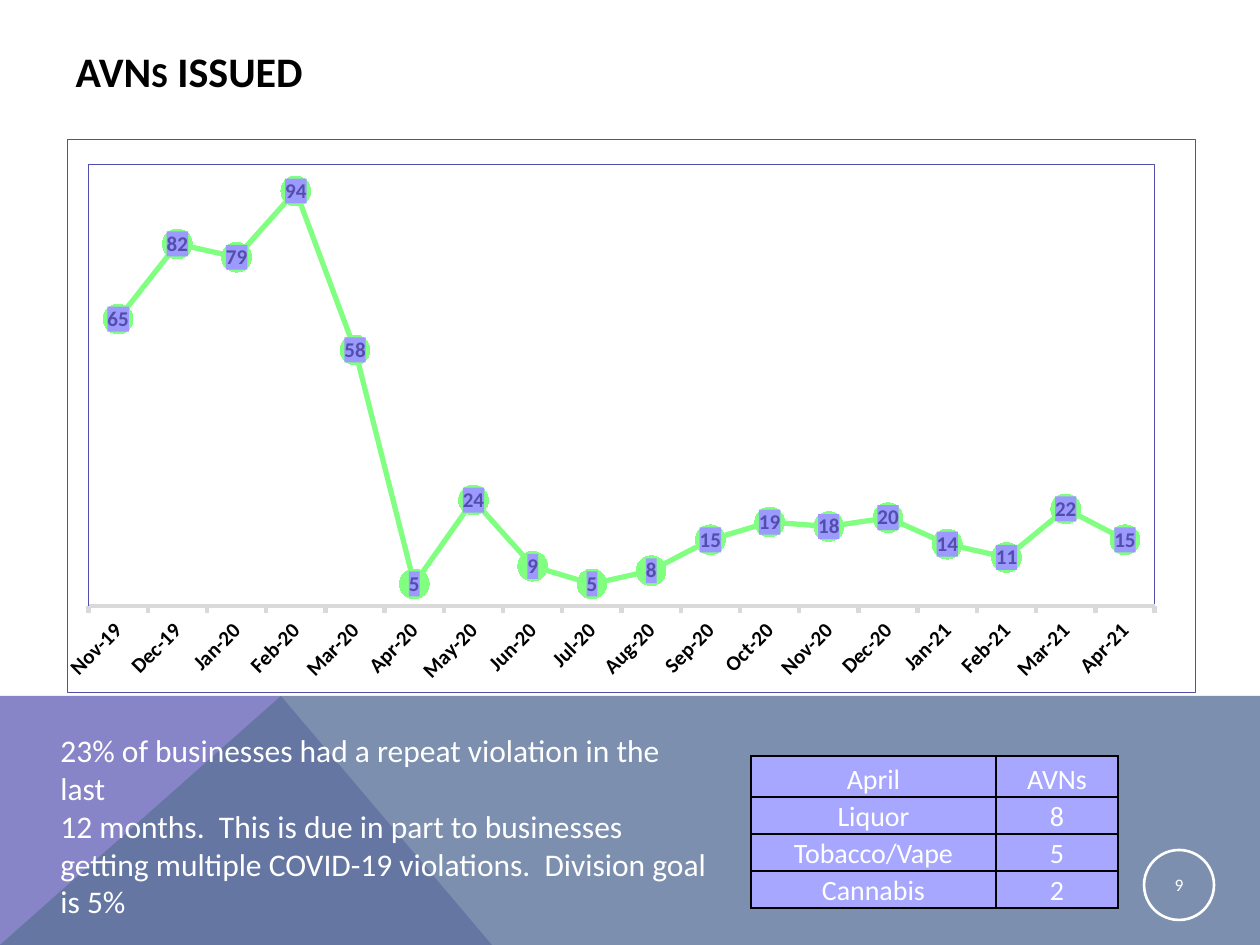
import pptx
import pptx.chart.data
import pptx.dml.color
import pptx.enum.chart
import pptx.enum.shapes
import pptx.enum.text
import pptx.oxml
import pptx.oxml.ns
import pptx.util

PX = 914400 / 126
FONT = "Calibri"
COLORS = {
    "white": "FFFFFF", "black": "000000", "violet": "8784C7", "slate": "5D739A",
    "indigo": "524EAB", "green": "81FF81", "axis": "D9D9D9",
    "label": "9D9AFF", "cell": "A7A7FF",
}
RGB = {name: pptx.dml.color.RGBColor.from_string(h) for name, h in COLORS.items()}
A = "http://schemas.openxmlformats.org/drawingml/2006/main"
C = "http://schemas.openxmlformats.org/drawingml/2006/chart"
qn = pptx.oxml.ns.qn


def px(*values):
    return [pptx.util.Emu(round(v * PX)) for v in values]


def add_run(p, text, size, color, bold=False):
    r = p.add_run()
    r.text = text
    r.font.name, r.font.size, r.font.bold = FONT, pptx.util.Pt(size), bold
    r.font.color.rgb = RGB[color]


prs = pptx.Presentation()
prs.slide_width, prs.slide_height = px(1260, 945)
s = prs.slides.add_slide(prs.slide_layouts[5])

# Title
title = s.shapes.title
title.left, title.top, title.width, title.height = px(63, 39, 1134, 158)
tf = title.text_frame
tf.vertical_anchor = pptx.enum.text.MSO_ANCHOR.TOP
p = tf.paragraphs[0]
p.alignment = pptx.enum.text.PP_ALIGN.LEFT
for text, size in (("AVN", 24), ("S", 20), (" ISSUED", 24)):
    add_run(p, text, size, "black", True)

# Footer band
bands = (
    ("violet", None, [(0, 945), (0, 696), (281, 696), (492, 945)]),
    ("slate", 80, [(0, 945), (281, 696), (1260, 696), (1260, 945)]),
)
for color, opacity, points in bands:
    fb = s.shapes.build_freeform(*points[0], scale=PX)
    fb.add_line_segments(points[1:], close=True)
    sp = fb.convert_to_shape()
    sp.shadow.inherit = False
    sp.fill.solid()
    sp.fill.fore_color.rgb = RGB[color]
    sp.line.fill.background()
    if opacity:
        clr = sp.element.spPr.find(qn("a:solidFill"))[0]
        clr.append(pptx.oxml.parse_xml(f'<a:alpha xmlns:a="{A}" val="{opacity * 1000}"/>'))

# Slide number
sp = s.shapes.add_shape(pptx.enum.shapes.MSO_SHAPE.OVAL, *px(1144, 850, 70, 70))
sp.shadow.inherit = False
sp.fill.background()
sp.line.color.rgb = RGB["white"]
sp.line.width = pptx.util.Pt(1.5)
tf = sp.text_frame
tf.margin_left = tf.margin_right = tf.margin_top = tf.margin_bottom = px(1)[0]
tf.vertical_anchor = pptx.enum.text.MSO_ANCHOR.MIDDLE
tf.paragraphs[0].alignment = pptx.enum.text.PP_ALIGN.CENTER
add_run(tf.paragraphs[0], "9", 10, "white")

# Chart
avns = (
    ("Nov-19", 65), ("Dec-19", 82), ("Jan-20", 79), ("Feb-20", 94), ("Mar-20", 58),
    ("Apr-20", 5), ("May-20", 24), ("Jun-20", 9), ("Jul-20", 5), ("Aug-20", 8),
    ("Sep-20", 15), ("Oct-20", 19), ("Nov-20", 18), ("Dec-20", 20), ("Jan-21", 14),
    ("Feb-21", 11), ("Mar-21", 22), ("Apr-21", 15),
)
data = pptx.chart.data.CategoryChartData()
data.categories = [month for month, count in avns]
data.add_series("Series 1", [count for month, count in avns])
chart = s.shapes.add_chart(
    pptx.enum.chart.XL_CHART_TYPE.LINE_MARKERS, *px(65, 139, 1131, 554), data).chart
chart.has_legend = chart.has_title = False
chart.font.name, chart.font.size = FONT, pptx.util.Pt(10)
chart.font.color.rgb = RGB["black"]
chart.plots[0].vary_by_categories = False

axis = chart.value_axis
axis.minimum_scale, axis.maximum_scale = 0, 100
axis.has_major_gridlines = False
axis.visible = False

axis = chart.category_axis
axis.major_tick_mark = pptx.enum.chart.XL_TICK_MARK.OUTSIDE
axis.format.line.color.rgb = RGB["axis"]
axis.format.line.width = pptx.util.Pt(2.5)
font = axis.tick_labels.font
font.name, font.size, font.bold = FONT, pptx.util.Pt(12), True
font.color.rgb = RGB["black"]
chart.element.find(".//" + qn("c:catAx")).find(".//" + qn("a:bodyPr")).set("rot", "-2700000")

series = chart.plots[0].series[0]
series.smooth = False
series.format.line.color.rgb = RGB["green"]
series.format.line.width = pptx.util.Pt(3)
series.marker.style = pptx.enum.chart.XL_MARKER_STYLE.CIRCLE
series.marker.size = 17
series.marker.format.fill.solid()
series.marker.format.fill.fore_color.rgb = RGB["green"]
series.marker.format.line.color.rgb = RGB["green"]

labels = series.data_labels
labels.show_value = True
labels.position = pptx.enum.chart.XL_LABEL_POSITION.CENTER
labels.number_format, labels.number_format_is_linked = "0", False
font = labels.font
font.name, font.size, font.bold = FONT, pptx.util.Pt(12), True
font.color.rgb = RGB["indigo"]

# Chart, plot and label boxes
border = (f'<a:ln w="9525"><a:solidFill><a:srgbClr val="{COLORS["indigo"]}"/>'
          '</a:solidFill></a:ln>')
plot_area = chart.element.find(".//" + qn("c:plotArea"))
label_text = chart.element.find(".//" + qn("c:dLbls")).find(qn("c:txPr"))
boxes = (
    (chart.element.find(qn("c:chart")).addnext, "white", border),
    (plot_area.append, "white", border),
    (label_text.addprevious, "label", ""),
)
for insert, color, line in boxes:
    insert(pptx.oxml.parse_xml(
        f'<c:spPr xmlns:c="{C}" xmlns:a="{A}"><a:solidFill>'
        f'<a:srgbClr val="{COLORS[color]}"/></a:solidFill>{line}</c:spPr>'))

for old in plot_area.findall(qn("c:layout")):
    plot_area.remove(old)
plot_area.insert(0, pptx.oxml.parse_xml(
    f'<c:layout xmlns:c="{C}"><c:manualLayout><c:layoutTarget val="inner"/>'
    '<c:xMode val="edge"/><c:yMode val="edge"/><c:x val="0.019"/><c:y val="0.045"/>'
    '<c:w val="0.945"/><c:h val="0.799"/></c:manualLayout></c:layout>'))

# Table
rows = (("April", "AVNs"), ("Liquor", "8"), ("Tobacco/Vape", "5"), ("Cannabis", "2"))
frame = s.shapes.add_table(4, 2, *px(751, 756, 367, 152))
table = frame.table
table.first_row = table.horz_banding = False
for column, width in zip(table.columns, px(245, 122)):
    column.width = width
for row, height, texts in zip(table.rows, px(41, 37, 37, 37), rows):
    row.height = height
    for cell, text in zip(row.cells, texts):
        cell.margin_left = cell.margin_right = px(1)[0]
        cell.margin_top = cell.margin_bottom = 0
        cell.vertical_anchor = pptx.enum.text.MSO_ANCHOR.BOTTOM
        p = cell.text_frame.paragraphs[0]
        p.alignment = pptx.enum.text.PP_ALIGN.CENTER
        p.line_spacing = 1.07
        add_run(p, text, 16, "white")
        cell.fill.solid()
        cell.fill.fore_color.rgb = RGB["cell"]
for tcPr in frame.element.iter(qn("a:tcPr")):
    for i, side in enumerate(("lnL", "lnR", "lnT", "lnB")):
        tcPr.insert(i, pptx.oxml.parse_xml(
            f'<a:{side} xmlns:a="{A}" w="12700"><a:solidFill>'
            f'<a:srgbClr val="{COLORS["black"]}"/></a:solidFill></a:{side}>'))

# Comment
tf = s.shapes.add_textbox(*px(48, 725, 674, 242)).text_frame
tf.word_wrap = True
tf.auto_size = pptx.enum.text.MSO_AUTO_SIZE.SHAPE_TO_FIT_TEXT
add_run(tf.paragraphs[0], "23% of businesses had a repeat violation in the last", 18, "white")
add_run(tf.add_paragraph(),
        "12 months.  This is due in part to businesses getting multiple COVID-19 "
        "violations.  Division goal is 5%", 18, "white")

prs.save("out.pptx")
